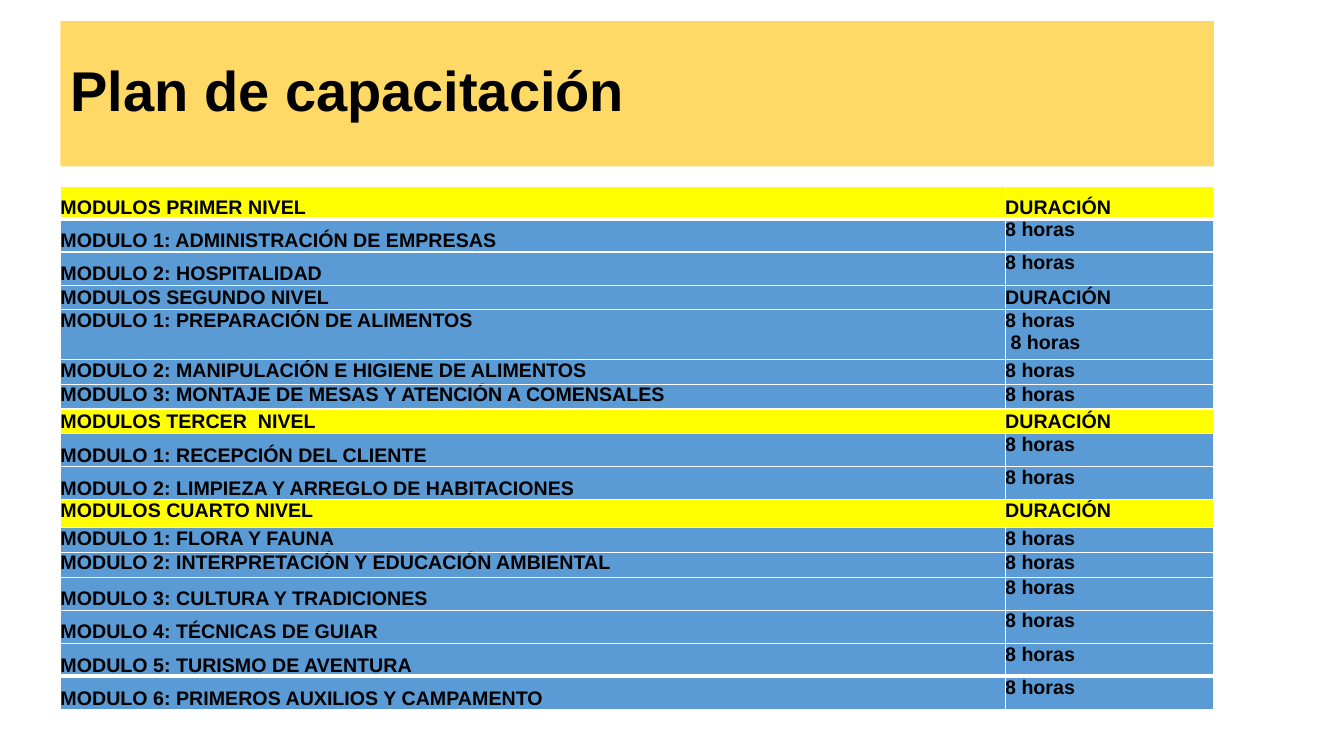
from dataclasses import dataclass

from lxml import etree
from pptx import Presentation
from pptx import util as u
from pptx.dml.color import RGBColor
from pptx.enum import text as t
from pptx.oxml import ns

COLORS = {"banner": "FFD966", "heading": "FFFF00", "module": "5B9BD5",
          "text": "000000", "border": "FFFFFF"}
FONT = "Arial"
SLIDE_WIDTH, SLIDE_HEIGHT = u.Inches(13.33), u.Inches(7.5)

# Grid: 100 columns by 100 rows
LEFT, WIDTH = 4.5, 85.82
TITLE_TOP, TITLE_HEIGHT = 2.8, 19.2
TABLE_TOP = 24.6
COLUMN_WIDTHS = (70.29, 15.53)
TALL, COMPACT, HEADING, CLOSING, DOUBLE = 4.33, 3.3, 3.2, 3.7, 6.6
THIN, THICK = 1, 3
HOURS = "8 horas"


@dataclass(frozen=True)
class Row:
    label: str
    height: float = TALL
    durations: tuple[str, ...] = (HOURS,)
    fill: str = "module"
    spacing: float = 1.5
    duration_spacing: float = 1.0
    space_after: float = 0
    centred: bool = False
    justified: bool = True
    top: float = THIN
    bottom: float = THIN


def heading(label: str, height: float, spacing: float, **options) -> Row:
    """Row that opens a level of the plan."""
    return Row(label, height, ("DURACIÓN",), spacing=spacing,
               duration_spacing=spacing, **{"fill": "heading", **options})


def compact(label: str, height: float = COMPACT, **options) -> Row:
    """Module row with single line spacing."""
    return Row(label, height, spacing=1.0, **options)


MIDDLE_LEVEL = {"centred": True, "justified": False, "space_after": 8}
ROWS = (
    heading("MODULOS PRIMER NIVEL", TALL, 1.5, centred=True, bottom=THICK),
    Row("MODULO 1: ADMINISTRACIÓN DE EMPRESAS", top=THICK),
    Row("MODULO 2: HOSPITALIDAD"),
    heading("MODULOS SEGUNDO NIVEL", HEADING, 1.06, fill="module", **MIDDLE_LEVEL),
    compact("MODULO 1: PREPARACIÓN DE ALIMENTOS", DOUBLE,
            durations=(HOURS, " " + HOURS)),
    compact("MODULO 2: MANIPULACIÓN E HIGIENE DE ALIMENTOS"),
    compact("MODULO 3: MONTAJE DE MESAS Y ATENCIÓN A COMENSALES"),
    heading("MODULOS TERCER  NIVEL", HEADING, 1.06, **MIDDLE_LEVEL),
    Row("MODULO 1: RECEPCIÓN DEL CLIENTE", space_after=8),
    Row("MODULO 2: LIMPIEZA Y ARREGLO DE HABITACIONES", space_after=8),
    heading("MODULOS CUARTO NIVEL", CLOSING, 1.0),
    compact("MODULO 1: FLORA Y FAUNA"),
    compact("MODULO 2: INTERPRETACIÓN Y EDUCACIÓN AMBIENTAL"),
    Row("MODULO 3: CULTURA Y TRADICIONES"),
    Row("MODULO 4: TÉCNICAS DE GUIAR"),
    Row("MODULO 5: TURISMO DE AVENTURA", bottom=THICK),
    Row("MODULO 6: PRIMEROS AUXILIOS Y CAMPAMENTO", top=THICK),
)


def across(columns: float) -> int:
    return round(SLIDE_WIDTH * columns / 100)


def down(rows: float) -> int:
    return round(SLIDE_HEIGHT * rows / 100)


def color(name: str) -> RGBColor:
    return RGBColor.from_string(COLORS[name])


def paint(target, name: str) -> None:
    target.fill.solid()
    target.fill.fore_color.rgb = color(name)


def write(frame, lines: tuple[str, ...], *, size: float, spacing: float = 1.0,
          space_after: float = 0, align=t.PP_ALIGN.LEFT) -> None:
    """Fill a text frame, one paragraph per line."""
    for index, line in enumerate(lines):
        paragraph = frame.add_paragraph() if index else frame.paragraphs[0]
        paragraph.alignment = align
        paragraph.line_spacing = spacing
        paragraph.space_before = u.Pt(0)
        paragraph.space_after = u.Pt(space_after)
        run = paragraph.add_run()
        run.text = line
        run.font.name, run.font.size, run.font.bold = FONT, u.Pt(size), True
        run.font.color.rgb = color("text")


def set_borders(cell, row: Row) -> None:
    properties = cell._tc.get_or_add_tcPr()
    widths = {"a:lnL": THIN, "a:lnR": THIN, "a:lnT": row.top, "a:lnB": row.bottom}
    for tag, width in widths.items():
        line = etree.SubElement(properties, ns.qn(tag), w=str(u.Pt(width)))
        fill = etree.SubElement(line, ns.qn("a:solidFill"))
        etree.SubElement(fill, ns.qn("a:srgbClr"), val=COLORS["border"])


def fill_cell(cell, row: Row, lines: tuple[str, ...], **text_format) -> None:
    set_borders(cell, row)
    paint(cell, row.fill)
    cell.margin_left = cell.margin_right = cell.margin_top = cell.margin_bottom = 0
    cell.vertical_anchor = t.MSO_ANCHOR.MIDDLE if row.centred else t.MSO_ANCHOR.TOP
    write(cell.text_frame, lines, size=14, **text_format)


def add_title(slide) -> None:
    title = slide.shapes.title
    title.left, title.top = across(LEFT), down(TITLE_TOP)
    title.width, title.height = across(WIDTH), down(TITLE_HEIGHT)
    paint(title, "banner")
    title.text_frame.vertical_anchor = t.MSO_ANCHOR.MIDDLE
    write(title.text_frame, ("Plan de capacitación",), size=40, spacing=0.9)


def add_plan(slide) -> None:
    height = sum(row.height for row in ROWS)
    table = slide.shapes.add_table(len(ROWS), len(COLUMN_WIDTHS), across(LEFT),
                                   down(TABLE_TOP), across(WIDTH), down(height)).table
    table.first_row = table.horz_banding = False
    for column, width in zip(table.columns, COLUMN_WIDTHS):
        column.width = across(width)
    for index, row in enumerate(ROWS):
        table.rows[index].height = down(row.height)
        is_module = row.durations[0] == HOURS
        align = t.PP_ALIGN.JUSTIFY if row.justified else t.PP_ALIGN.LEFT
        fill_cell(table.cell(index, 0), row, (row.label,), spacing=row.spacing,
                  space_after=row.space_after, align=align)
        fill_cell(table.cell(index, 1), row, row.durations,
                  spacing=row.duration_spacing,
                  space_after=0 if is_module else row.space_after,
                  align=t.PP_ALIGN.LEFT if is_module else align)


def main() -> None:
    presentation = Presentation()
    presentation.slide_width, presentation.slide_height = SLIDE_WIDTH, SLIDE_HEIGHT
    slide = presentation.slides.add_slide(presentation.slide_layouts[5])
    add_title(slide)
    add_plan(slide)
    presentation.save("out.pptx")


if __name__ == "__main__":
    main()
